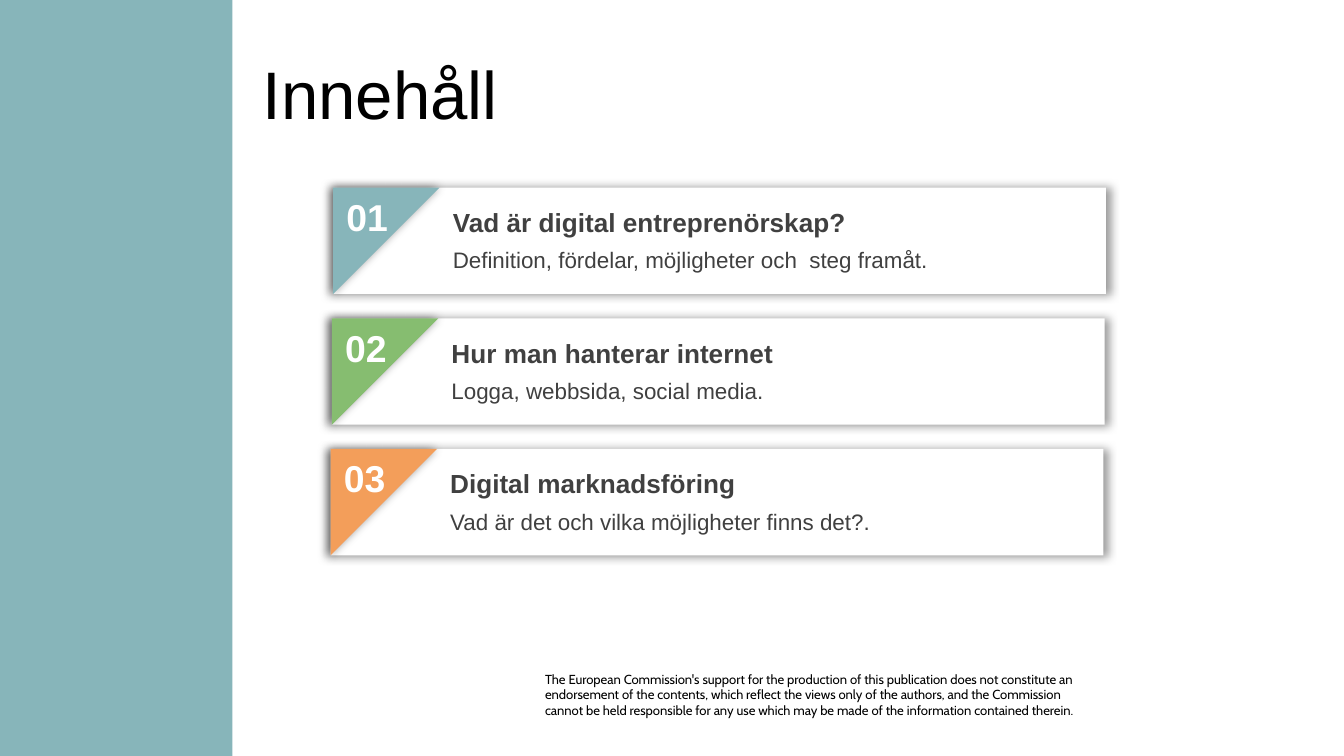
from dataclasses import dataclass

from lxml import etree
from pptx import Presentation
from pptx.dml.color import RGBColor
from pptx.enum.shapes import MSO_SHAPE
from pptx.enum.text import MSO_ANCHOR, PP_ALIGN
from pptx.oxml.ns import qn
from pptx.util import Pt

RECT = MSO_SHAPE.RECTANGLE
TRIANGLE = MSO_SHAPE.RIGHT_TRIANGLE
TOP, MIDDLE = MSO_ANCHOR.TOP, MSO_ANCHOR.MIDDLE
LEFT = PP_ALIGN.LEFT


@dataclass(frozen=True)
class Theme:
    teal: str = "87B5BA"
    green: str = "86BD70"
    orange: str = "F39E5A"
    white: str = "FFFFFF"
    black: str = "000000"
    grey: str = "404040"
    font: str = "Arial"
    small_font: str = "Cabin"
    title: float = 36
    number: float = 20
    heading: float = 14
    body: float = 12
    small: float = 7


@dataclass(frozen=True)
class Box:
    x: float
    y: float
    w: float
    h: float

    def lengths(self) -> tuple:
        return Pt(self.x), Pt(self.y), Pt(self.w), Pt(self.h)


@dataclass(frozen=True)
class Style:
    size: float
    color: str
    font: str = "Arial"
    bold: bool = False


@dataclass(frozen=True)
class Topic:
    heading: str
    body: str
    color: str


T = Theme()
TITLE = Style(T.title, T.black, T.font)
NUMBER = Style(T.number, T.white, T.font, True)
HEADING = Style(T.heading, T.grey, T.font, True)
BODY = Style(T.body, T.grey, T.font)
SMALL = Style(T.small, T.black, T.small_font)

TOPICS = [
    Topic("Vad är digital entreprenörskap?",
          "Definition, fördelar, möjligheter och  steg framåt.", T.teal),
    Topic("Hur man hanterar internet", "Logga, webbsida, social media.", T.green),
    Topic("Digital marknadsföring",
          "Vad är det och vilka möjligheter finns det?.", T.orange),
]
DISCLAIMER = [
    "The European Commission's support for the production of this publication "
    "does not constitute an endorsement of the contents, which reflect the views "
    "only of the authors, and the Commission",
    "cannot be held responsible for any use which may be made of the information "
    "contained therein.",
]

# Card grid: each row steps down and slightly to the left
CARD = Box(178.5, 100.5, 414, 57)
STEP_X, STEP_Y = -0.7, 70


def add_filled(shapes, kind, box: Box, color: str):
    sp = shapes.add_shape(kind, *box.lengths())
    sp.shadow.inherit = False
    sp.fill.solid()
    sp.fill.fore_color.rgb = RGBColor.from_string(color)
    sp.line.fill.background()
    return sp


def add_glow_shadow(sp) -> None:
    """Soft shadow, slightly larger than the shape and centred behind it."""
    effects = sp._element.spPr.find(qn("a:effectLst"))
    shadow = etree.SubElement(
        effects, qn("a:outerShdw"), blurRad=str(Pt(5)), sx="101000", sy="101000",
        algn="ctr", rotWithShape="0")
    color = etree.SubElement(shadow, qn("a:srgbClr"), val=T.black)
    etree.SubElement(color, qn("a:alpha"), val="40000")


def add_text(shapes, box: Box, lines: list[str], style: Style,
             anchor=TOP, inset: bool = True) -> None:
    tf = shapes.add_textbox(*box.lengths()).text_frame
    tf.word_wrap = True
    tf.vertical_anchor = anchor
    if not inset:
        tf.margin_left = tf.margin_right = tf.margin_top = tf.margin_bottom = 0
    for i, line in enumerate(lines):
        p = tf.paragraphs[0] if i == 0 else tf.add_paragraph()
        p.alignment = LEFT
        r = p.add_run()
        r.text = line
        r.font.name = style.font
        r.font.size = Pt(style.size)
        r.font.bold = style.bold
        r.font.color.rgb = RGBColor.from_string(style.color)


def add_topic(s, index: int, topic: Topic) -> None:
    x, y = CARD.x + index * STEP_X, CARD.y + index * STEP_Y

    # Card with its coloured corner
    card = s.shapes.add_group_shape().shapes
    add_glow_shadow(add_filled(card, RECT, Box(x, y, CARD.w, CARD.h), T.white))
    corner = add_filled(card, TRIANGLE, Box(x, y, CARD.h, CARD.h), topic.color)
    corner.rotation = 90
    add_glow_shadow(corner)

    # Number, heading and description
    add_text(s.shapes, Box(x, y, 42, 31.5), [f"{index + 1:02}"], NUMBER)
    texts = s.shapes.add_group_shape().shapes
    add_text(texts, Box(x + 57, y + 6.5, 345.6, 24.2), [topic.heading], HEADING)
    add_text(texts, Box(x + 57, y + 28, 345.6, 21.8), [topic.body], BODY)


def main() -> None:
    prs = Presentation()
    prs.slide_width, prs.slide_height = Pt(720), Pt(405)
    s = prs.slides.add_slide(prs.slide_layouts[6])

    # Frame: disclaimer, side band and title
    add_text(s.shapes, Box(292, 359.5, 300, 25.2), DISCLAIMER, SMALL, inset=False)
    add_filled(s.shapes, RECT, Box(0, 0, 124.5, 405), T.teal)
    add_text(s.shapes, Box(133.5, 27, 518, 45), ["Innehåll"], TITLE, MIDDLE)

    # Contents
    for i, topic in enumerate(TOPICS):
        add_topic(s, i, topic)

    prs.save("out.pptx")


if __name__ == "__main__":
    main()
